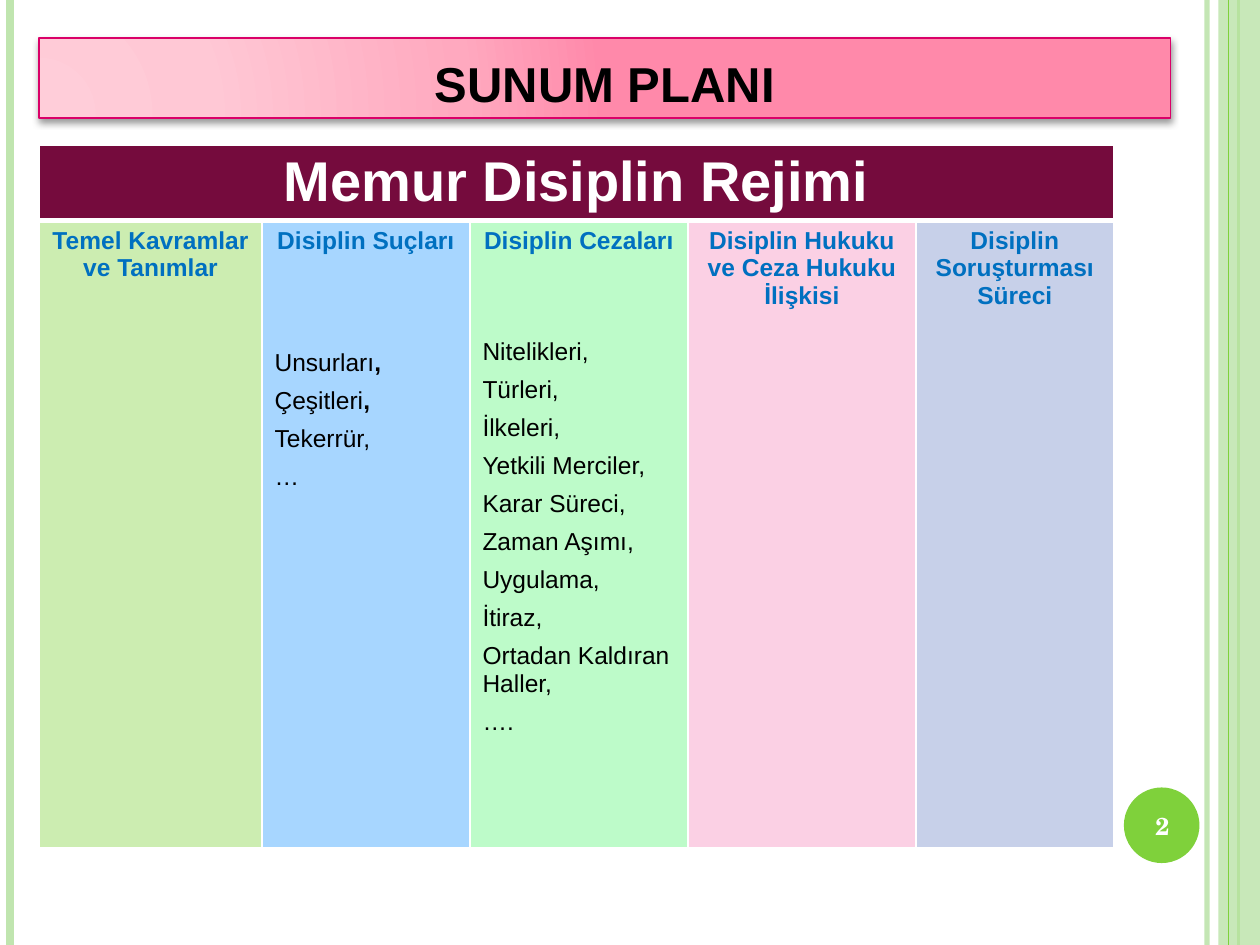
from lxml.etree import SubElement
from pptx import Presentation
from pptx.dml.color import RGBColor
from pptx.enum.shapes import MSO_CONNECTOR, MSO_SHAPE
from pptx.enum.text import MSO_ANCHOR, PP_ALIGN
from pptx.oxml import parse_xml
from pptx.oxml.ns import nsdecls, qn
from pptx.util import Inches, Pt

THEME = {
    "pale": "C0E5AF", "green": "7FD13B", "black": "000000", "white": "FFFFFF",
    "blue": "0070C0", "wine": "750B3D", "pink_line": "DA0068",
    "title_stops": [(0, "FFCDD9"), (30, "FFC8D5"), (75, "FFA9BF"), (100, "FF89AA")],
    "title": {"size": Pt(28), "bold": True, "name": "Arial"},
    "banner": {"size": Pt(32), "bold": True, "name": "Arial"},
    "heading": {"size": Pt(14), "bold": True, "name": "Arial"},
    "item": {"size": Pt(14), "bold": False, "name": "Arial"},
    "number": {"size": Pt(14), "bold": True, "name": "TeX Gyre Schola"},
}

deck = Presentation()
deck.slide_width, deck.slide_height = Inches(10), Inches(7.5)
COLUMN, ROW = deck.slide_width // 1000, deck.slide_height // 750
slide = deck.slides.add_slide(deck.slide_layouts[6])
shapes = slide.shapes


def place(left, top, width, height):
    return left * COLUMN, top * ROW, width * COLUMN, height * ROW


def write(paragraph, words, style, color, align=PP_ALIGN.CENTER):
    paragraph.alignment = align
    run = paragraph.add_run()
    run.text = words
    for attribute, value in THEME[style].items():
        setattr(run.font, attribute, value)
    run.font.color.rgb = RGBColor.from_string(THEME[color])


stripes = [(958, "pale", 3, 93), (8, "pale", 4.5, 100), (983, "green", 1.5, 100),
           (None, "pale", 0, 87), (975, "green", 0.75, 100)]
for column, color, weight, opacity in stripes:
    if column is None:
        stripe = shapes.add_shape(MSO_SHAPE.RECTANGLE, *place(967, 0, 33, 750))
        stripe.shadow.inherit = False
        stripe.fill.solid()
        stripe.fill.fore_color.rgb = RGBColor.from_string(THEME[color])
        stripe.line.fill.background()
    else:
        x = column * COLUMN
        stripe = shapes.add_connector(MSO_CONNECTOR.STRAIGHT, x, 0, x, 750 * ROW)
        stripe.line.color.rgb = RGBColor.from_string(THEME[color])
        stripe.line.width = Pt(weight)
        SubElement(stripe._element.spPr, qn("a:effectLst"))
    if opacity < 100:
        tint = next(stripe._element.spPr.iter(qn("a:srgbClr")))
        SubElement(tint, qn("a:alpha"), val=str(opacity * 1000))

badge = shapes.add_shape(MSO_SHAPE.OVAL, *place(892, 625, 60, 60))
badge.shadow.inherit = False
badge.fill.solid()
badge.fill.fore_color.rgb = RGBColor.from_string(THEME["green"])
badge.line.fill.background()

title = shapes.add_shape(MSO_SHAPE.RECTANGLE, *place(31, 30, 898, 64))
title.line.color.rgb = RGBColor.from_string(THEME["pink_line"])
title.line.width = Pt(1)
title.shadow.inherit = False
stops = "".join(f'<a:gs pos="{share * 1000}"><a:srgbClr val="{color}"/></a:gs>'
                for share, color in THEME["title_stops"])
title._element.spPr.find(qn("a:prstGeom")).addnext(parse_xml(
    f'<a:gradFill {nsdecls("a")} rotWithShape="1"><a:gsLst>{stops}</a:gsLst><a:path path="circle">'
    '<a:fillToRect l="5000" t="100000" r="120000" b="10000"/></a:path></a:gradFill>'))
title._element.spPr.find(qn("a:effectLst")).append(parse_xml(
    f'<a:outerShdw {nsdecls("a")} blurRad="{Pt(4)}" dist="{Pt(2)}" dir="5400000" rotWithShape="0">'
    f'<a:srgbClr val="{THEME["black"]}"><a:alpha val="40000"/></a:srgbClr></a:outerShdw>'))
title.text_frame.word_wrap = True
title.text_frame.vertical_anchor = MSO_ANCHOR.BOTTOM
write(title.text_frame.paragraphs[0], "SUNUM PLANI", "title", "black")

topics = [
    ("Temel Kavramlar ve Tanımlar", 177, "CCEDB1", 0, []),
    ("Disiplin Suçları", 165, "A7D6FF", 54,
     [("Unsurları", ","), ("Çeşitleri", ","), ("Tekerrür,", ""), ("…", "")]),
    ("Disiplin Cezaları", 173, "BDFBC9", 48,
     [(item, "") for item in (
         "Nitelikleri,", "Türleri,", "İlkeleri,", "Yetkili Merciler,", "Karar Süreci,",
         "Zaman Aşımı,", "Uygulama,", "İtiraz,", "Ortadan Kaldıran Haller,", "….")]),
    ("Disiplin Hukuku ve Ceza Hukuku İlişkisi", 181, "FBD0E4", 0, []),
    ("Disiplin Soruşturması Süreci", 157, "C7D0E9", 0, []),
]
total_width = sum(topic[1] for topic in topics)
plan = shapes.add_table(2, len(topics), *place(31, 115, total_width, 558)).table
for flag in ("first_row", "horz_banding"):
    setattr(plan, flag, False)
plan.rows[0].height, plan.rows[1].height = 60 * ROW, 498 * ROW

for index, (heading, width, tint, gap, items) in enumerate(topics):
    plan.columns[index].width = width * COLUMN
    for level, fill in enumerate((THEME["wine"], tint)):
        cell = plan.cell(level, index)
        borders = {"lnL": 1, "lnR": 1, "lnT": 1 if level == 0 else 3, "lnB": 3 if level == 0 else 1}
        for side, weight in borders.items():
            edge = SubElement(cell._tc.get_or_add_tcPr(), qn(f"a:{side}"), w=str(Pt(weight)))
            SubElement(SubElement(edge, qn("a:solidFill")), qn("a:srgbClr"), val=THEME["white"])
        cell.fill.solid()
        cell.fill.fore_color.rgb = RGBColor.from_string(fill)
    frame = plan.cell(1, index).text_frame
    write(frame.paragraphs[0], heading, "heading", "blue")
    for position, (item, bold_end) in enumerate(items):
        line = frame.add_paragraph()
        line.space_before = Pt(0 if position else gap)
        line.space_after = Pt(6)
        write(line, item, "item", "black", PP_ALIGN.LEFT)
        if bold_end:
            write(line, bold_end, "heading", "black", PP_ALIGN.LEFT)

plan.cell(0, 0).merge(plan.cell(0, len(topics) - 1))
write(plan.cell(0, 0).text_frame.paragraphs[0], "Memur Disiplin Rejimi", "banner", "white")

number = shapes.add_textbox(*place(889, 627, 67, 57)).text_frame
number.word_wrap = True
number.vertical_anchor = MSO_ANCHOR.MIDDLE
write(number.paragraphs[0], "2", "number", "white")

deck.save("out.pptx")
